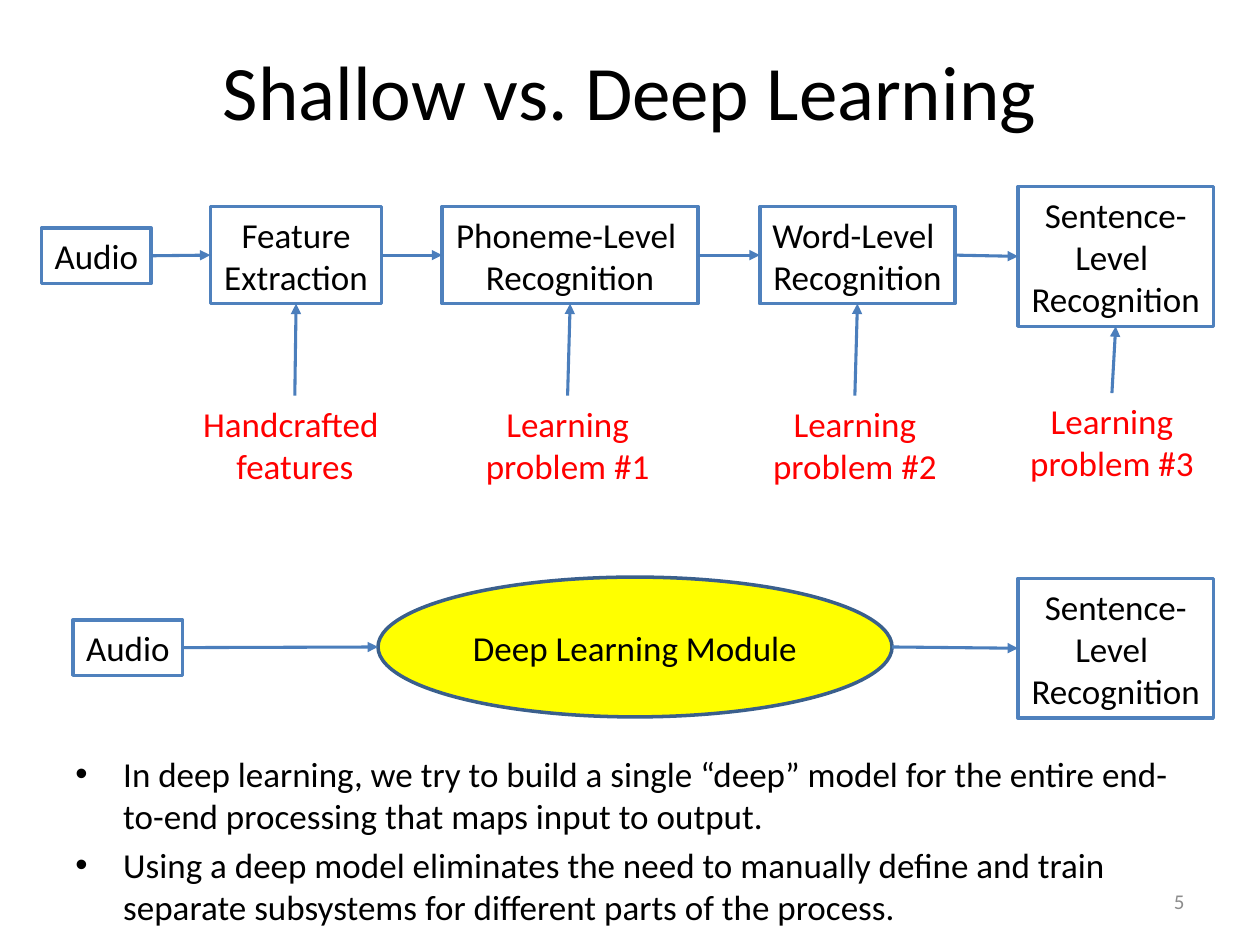
from lxml.etree import SubElement
from pptx import Presentation
from pptx.dml.color import RGBColor
from pptx.enum.shapes import MSO_CONNECTOR as CONN, MSO_SHAPE as SHAPE
from pptx.enum.text import MSO_ANCHOR as ANCHOR, PP_ALIGN as ALIGN
from pptx.oxml.ns import qn
from pptx.util import Inches, Pt

TOP, LEFT, BOTTOM, RIGHT = range(4)


def rgb(value):
    return RGBColor.from_string(value)


def side_middle(sp, side):
    fx, fy = [(0.5, 0), (0, 0.5), (0.5, 1), (1, 0.5)][side]
    return int(sp.left + fx * sp.width), int(sp.top + fy * sp.height)


class Diagram:
    font = "Calibri"
    black, red, grey = "000000", "FF0000", "8C8C8C"
    box_line, oval_line, arrow_line = "4F81BD", "3A5F8C", "4B7EBC"
    oval_fill = "FFFF00"

    def __init__(self, slide):
        self.s = slide

    def set_text(self, sp, paragraphs, size=20, color=black, align=ALIGN.CENTER,
                 anchor=ANCHOR.MIDDLE, wrap=True):
        tf = sp.text_frame
        tf.word_wrap, tf.vertical_anchor = wrap, anchor
        for i, text in enumerate(paragraphs):
            p = tf.add_paragraph() if i else tf.paragraphs[0]
            p.text, p.alignment = text, align
            for r in p.runs:
                for name, value in {"name": self.font, "size": Pt(size)}.items():
                    setattr(r.font, name, value)
                r.font.color.rgb = rgb(color)
        return sp

    def text(self, at, *paragraphs, **style):
        sp = self.s.shapes.add_textbox(*map(Inches, at))
        return self.set_text(sp, paragraphs, **style)

    def bullets(self, at, *paragraphs):
        sp = self.text(at, *paragraphs, align=ALIGN.LEFT, anchor=ANCHOR.TOP)
        for p in sp.text_frame.paragraphs:
            p.space_before = Pt(4)
            pPr = p._p.get_or_add_pPr()
            pPr.set("marL", str(Inches(0.38)))
            pPr.set("indent", str(Inches(-0.38)))
            SubElement(pPr, qn("a:buFont"), typeface="Arial")
            SubElement(pPr, qn("a:buChar"), char="•")

    def shape(self, kind, at, text, line, fill=None, **style):
        sp = self.s.shapes.add_shape(kind, *map(Inches, at))
        sp.shadow.inherit = False
        if fill:
            sp.fill.solid()
            sp.fill.fore_color.rgb = rgb(fill)
        else:
            sp.fill.background()
        sp.line.color.rgb, sp.line.width = rgb(line), Pt(2)
        return self.set_text(sp, [text], **style)

    def box(self, at, text, wrap=False):
        return self.shape(SHAPE.RECTANGLE, at, text, self.box_line, wrap=wrap)

    def oval(self, at, text):
        return self.shape(SHAPE.OVAL, at, text, self.oval_line, self.oval_fill)

    def arrow(self, start, end, start_side=RIGHT, end_side=LEFT, join="both"):
        """Draw an arrow, joined to "both" shapes or only to the "start" or "end"."""
        c = self.s.shapes.add_connector(
            CONN.STRAIGHT, *side_middle(start, start_side), *side_middle(end, end_side))
        if join != "end":
            c.begin_connect(start, start_side)
        if join != "start":
            c.end_connect(end, end_side)
        c.line.color.rgb, c.line.width = rgb(self.arrow_line), Pt(1.75)
        SubElement(c.line._get_or_add_ln(), qn("a:tailEnd"), type="triangle")
        SubElement(c._element.spPr, qn("a:effectLst"))


def main():
    prs = Presentation()
    prs.slide_width, prs.slide_height = Inches(10), Inches(7.5)
    d = Diagram(prs.slides.add_slide(prs.slide_layouts[6]))

    d.text((0.5, 0.17, 9, 1.08), "Shallow vs. Deep Learning", size=44)
    d.bullets(
        (0.5, 5.92, 9, 1.14),
        "In deep learning, we try to build a single “deep” model for the entire "
        "end-to-end processing that maps input to output.",
        "Using a deep model eliminates the need to manually define and train "
        "separate subsystems for different parts of the process.")
    d.text((7.17, 6.95, 2.33, 0.4), "5", size=12, color=d.grey, align=ALIGN.RIGHT)

    sentence = "Sentence-Level \nRecognition"

    # Shallow pipeline: each stage after the audio has a red label below it
    previous = d.box((0.33, 1.81, 0.87, 0.44), "Audio")
    stages = [
        ((1.67, 1.64, 1.36, 0.77), "Feature\nExtraction",
         (1.5, 3.14, 1.68, 0.77), "Handcrafted \nfeatures"),
        ((3.51, 1.64, 2.03, 0.77), "Phoneme-Level \nRecognition",
         (3.75, 3.14, 1.51, 0.77), "Learning\nproblem #1"),
        ((6.03, 1.64, 1.55, 0.77), "Word-Level \nRecognition",
         (6.03, 3.14, 1.51, 0.77), "Learning\nproblem #2"),
        ((8.08, 1.48, 1.55, 1.11), sentence,
         (8.07, 3.12, 1.51, 0.77), "Learning\nproblem #3"),
    ]
    for box_at, stage, label_at, note in stages:
        box = d.box(box_at, stage, wrap=stage == sentence)
        label = d.text(label_at, note, color=d.red, wrap=False)
        d.arrow(previous, box)
        d.arrow(label, box, TOP, BOTTOM)
        previous = box

    # Deep pipeline: one module from end to end
    audio = d.box((0.58, 4.92, 0.87, 0.44), "Audio")
    module = d.oval((3, 4.58, 4.08, 1.11), "Deep Learning Module")
    result = d.box((8.08, 4.59, 1.55, 1.11), sentence, wrap=True)
    d.arrow(audio, module, join="start")
    d.arrow(module, result, join="end")

    prs.save("out.pptx")


if __name__ == "__main__":
    main()
